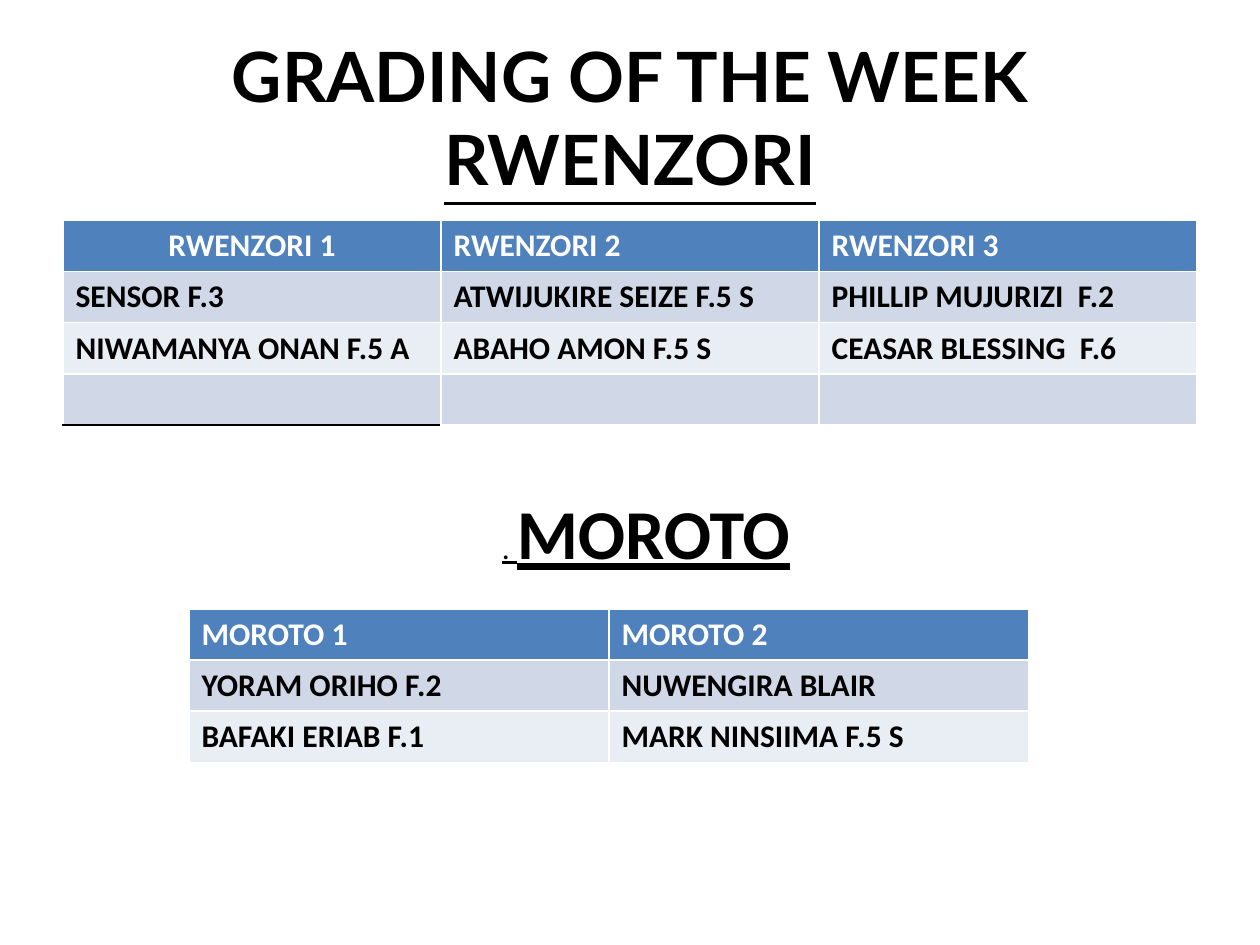
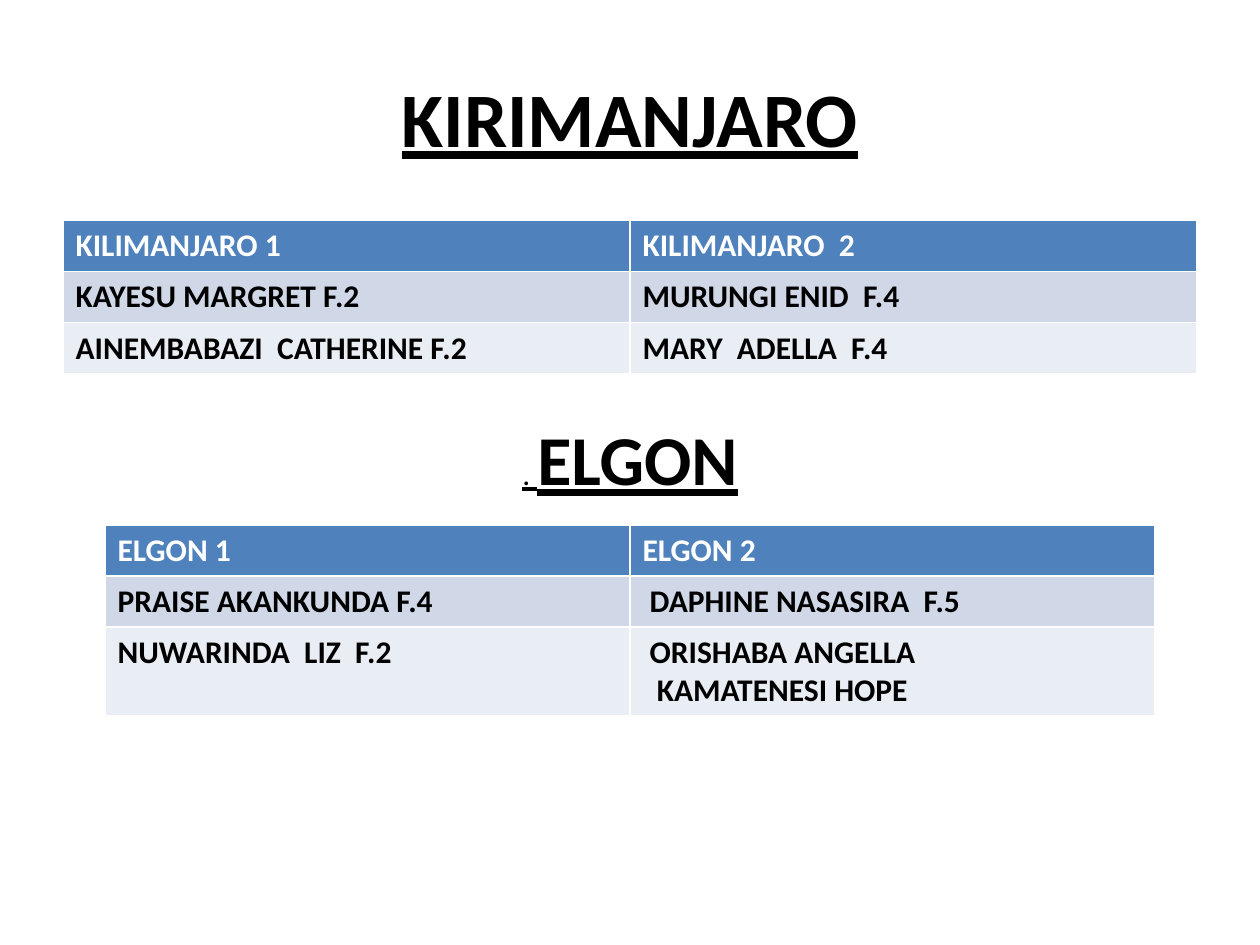
from dataclasses import dataclass

from lxml.etree import SubElement
from pptx import Presentation
from pptx.dml.color import RGBColor
from pptx.enum.text import MSO_ANCHOR, MSO_AUTO_SIZE, PP_ALIGN
from pptx.oxml.ns import qn
from pptx.util import Inches, Pt

GRID_COLUMNS, GRID_ROWS = 120, 90
ROW_SPAN = 4.87
TITLE_BOX = (6, 3.6, 108, 15)


@dataclass(frozen=True)
class Theme:
    ink: RGBColor = RGBColor.from_string("000000")
    paper: RGBColor = RGBColor.from_string("FFFFFF")
    header: RGBColor = RGBColor.from_string("4F81BD")
    bands: tuple = (RGBColor.from_string("D0D8E8"), RGBColor.from_string("E9EDF4"))
    body_font: str = "Calibri"
    lead_font: str = "Lato"
    title_size: float = 44
    lead_size: float = 39.6
    house_size: float = 40
    body_size: float = 18


THEME = Theme()

prs = Presentation()
prs.slide_width, prs.slide_height = Inches(10), Inches(7.5)
TITLE_ONLY = prs.slide_layouts[5]


def place(box):
    left, top, width, height = box
    column, row = prs.slide_width / GRID_COLUMNS, prs.slide_height / GRID_ROWS
    return int(left * column), int(top * row), int(width * column), int(height * row)


def style(font, size, color=THEME.ink, name=THEME.body_font, bold=True):
    font.name, font.size, font.bold = name, Pt(size), bold
    font.color.rgb = color


def add_title(slide, lines, size, font_name):
    title = slide.shapes.title
    title.left, title.top, title.width, title.height = place(TITLE_BOX)
    frame = title.text_frame
    frame.auto_size = MSO_AUTO_SIZE.NONE
    frame.vertical_anchor = MSO_ANCHOR.MIDDLE
    heading = frame.paragraphs[0]
    heading.alignment = PP_ALIGN.CENTER
    style(heading.font, size, name=font_name)
    for position, line in enumerate(lines):
        if position:
            heading.add_line_break()
        run = heading.add_run()
        run.text = line
        run.font.underline = position == len(lines) - 1


def add_house_heading(slide, house, box):
    frame = slide.shapes.add_textbox(*place(box)).text_frame
    frame.word_wrap = True
    heading = frame.paragraphs[0]
    heading.alignment = PP_ALIGN.CENTER
    for text, size, bold in ((". ", THEME.body_size, False), (house, THEME.house_size, True)):
        run = heading.add_run()
        run.text = text
        style(run.font, size, bold=bold)
        run.font.underline = True


def add_grading(slide, rows, left, top, width):
    box = place((left, top, width, ROW_SPAN * len(rows)))
    grading = slide.shapes.add_table(len(rows), len(rows[0]), *box).table
    for row_index, names in enumerate(rows):
        is_header = row_index == 0
        fill = THEME.header if is_header else THEME.bands[(row_index - 1) % 2]
        for column_index, name in enumerate(names):
            cell = grading.cell(row_index, column_index)
            cell.text = name
            cell.fill.solid()
            cell.fill.fore_color.rgb = fill
            for entry in cell.text_frame.paragraphs:
                style(entry.font, THEME.body_size, THEME.paper if is_header else THEME.ink)
    return grading


def underline_cell(cell):
    properties = cell._tc.get_or_add_tcPr()
    border = SubElement(properties, qn("a:lnB"), w=str(Pt(1)))
    color = SubElement(SubElement(border, qn("a:solidFill")), qn("a:srgbClr"))
    color.set("val", str(THEME.ink))
    properties.insert(0, border)


def build_rwenzori_and_moroto():
    slide = prs.slides.add_slide(TITLE_ONLY)
    add_title(slide, ("GRADING OF THE WEEK", "RWENZORI"), THEME.lead_size, THEME.lead_font)
    rwenzori = add_grading(slide, (
        ("RWENZORI 1", "RWENZORI 2", "RWENZORI 3"),
        ("SENSOR F.3", "ATWIJUKIRE SEIZE F.5 S", "PHILLIP MUJURIZI  F.2"),
        ("NIWAMANYA ONAN F.5 A", "ABAHO AMON F.5 S", "CEASAR BLESSING  F.6"),
        ("", "", ""),
    ), 6, 21, 108)
    rwenzori.cell(0, 0).text_frame.paragraphs[0].alignment = PP_ALIGN.CENTER
    underline_cell(rwenzori.cell(3, 0))
    add_house_heading(slide, "MOROTO", (12, 46, 99, 17.4))
    add_grading(slide, (
        ("MOROTO 1", "MOROTO 2"),
        ("YORAM ORIHO F.2", "NUWENGIRA BLAIR"),
        ("BAFAKI ERIAB F.1", "MARK NINSIIMA F.5 S"),
    ), 18, 58, 80)


def build_kirimanjaro_and_elgon():
    slide = prs.slides.add_slide(TITLE_ONLY)
    add_title(slide, ("KIRIMANJARO",), THEME.title_size, THEME.body_font)
    add_grading(slide, (
        ("KILIMANJARO 1", "KILIMANJARO  2"),
        ("KAYESU MARGRET F.2", "MURUNGI ENID  F.4"),
        ("AINEMBABAZI  CATHERINE F.2", "MARY  ADELLA  F.4"),
    ), 6, 21, 108)
    add_house_heading(slide, "ELGON", (30, 39, 60, 17.4))
    add_grading(slide, (
        ("ELGON 1", "ELGON 2"),
        ("PRAISE AKANKUNDA F.4", " DAPHINE NASASIRA  F.5"),
        ("NUWARINDA  LIZ  F.2", " ORISHABA ANGELLA\n  KAMATENESI HOPE"),
    ), 10, 50, 100)


if __name__ == "__main__":
    build_rwenzori_and_moroto()
    build_kirimanjaro_and_elgon()
    prs.save("out.pptx")
